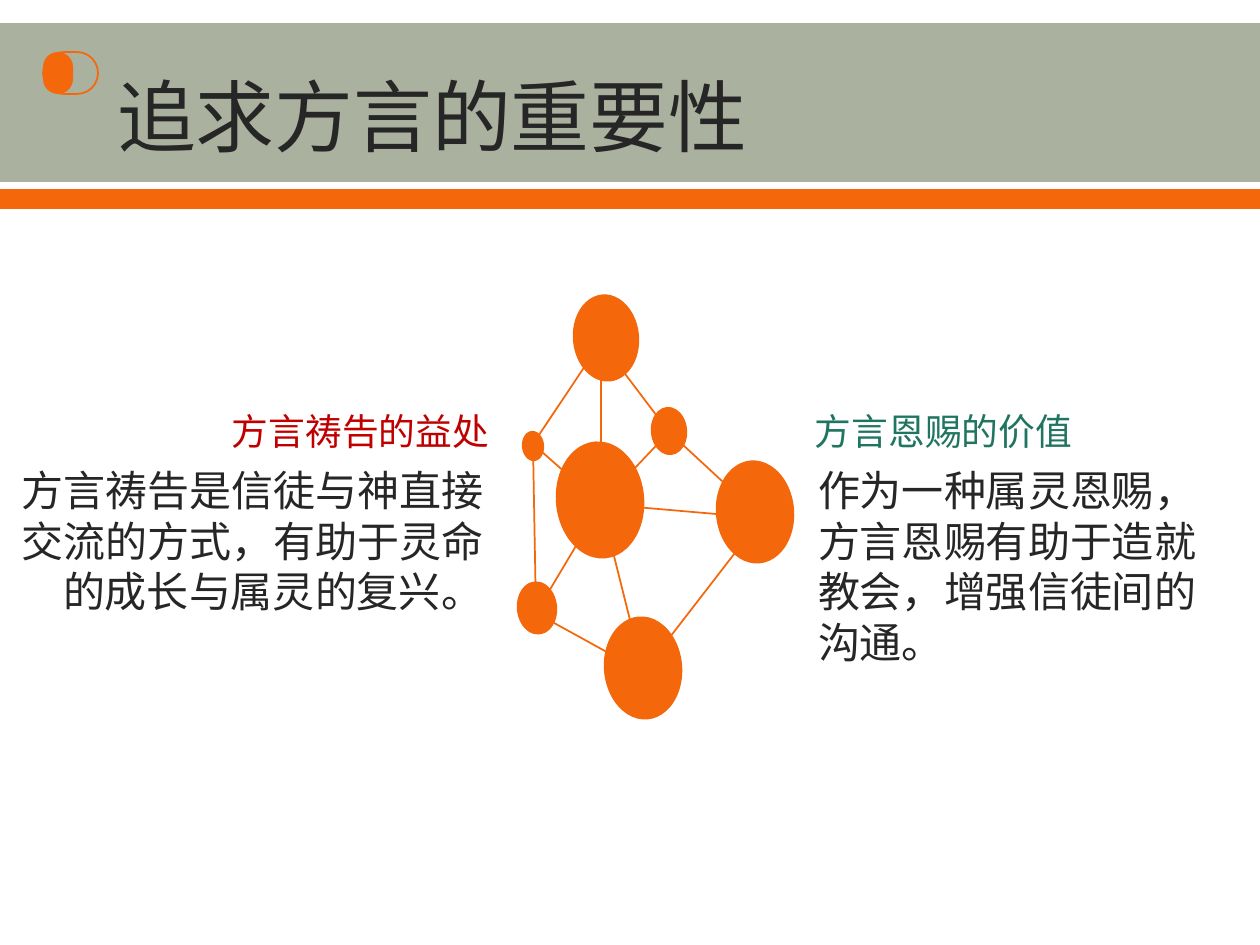
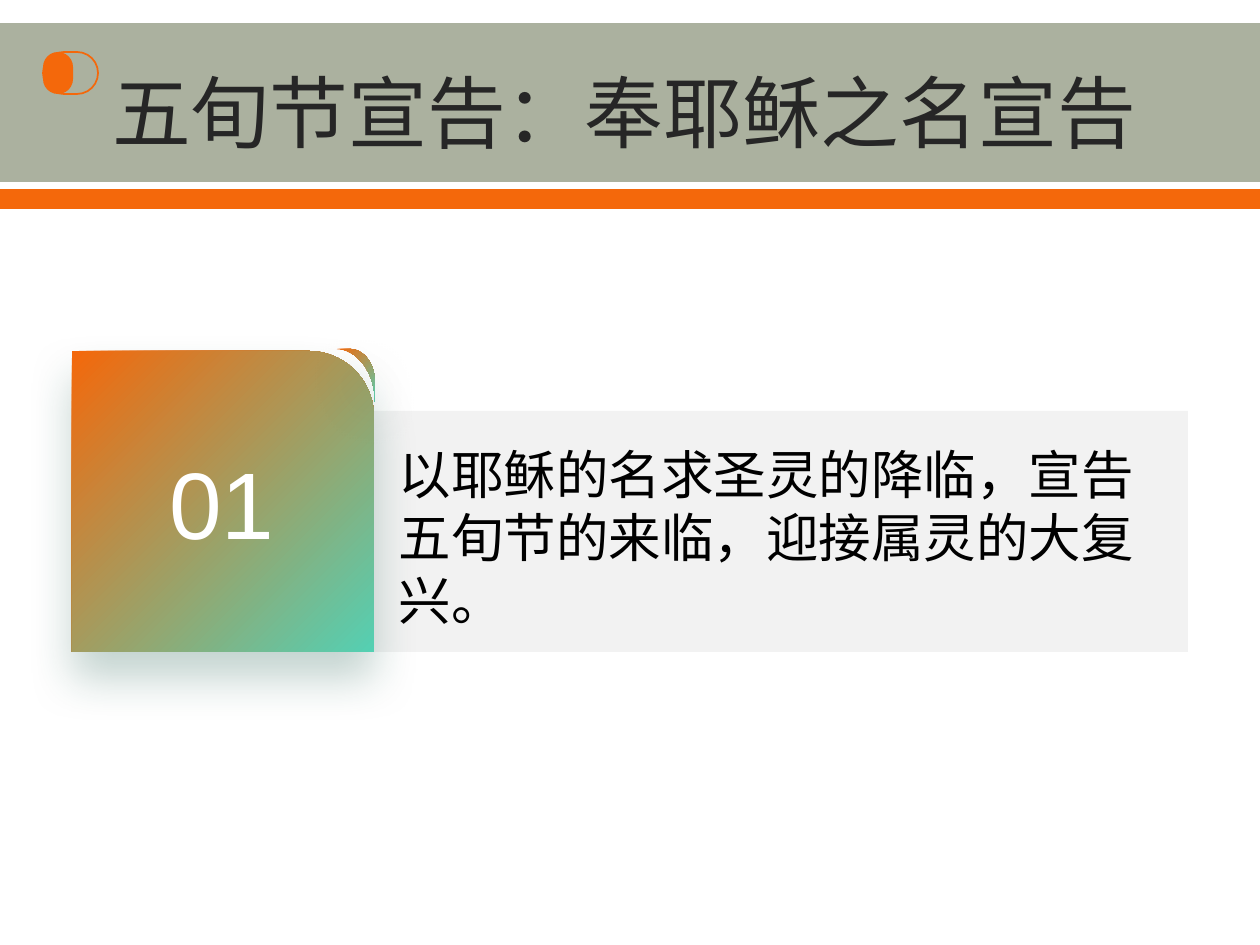
from math import cos, pi, sin

from lxml import etree
from pptx import Presentation
from pptx.dml.color import RGBColor
from pptx.enum.lang import MSO_LANGUAGE_ID
from pptx.enum.shapes import MSO_CONNECTOR, MSO_SHAPE
from pptx.enum.text import MSO_ANCHOR, PP_ALIGN
from pptx.oxml.ns import qn
from pptx.util import Pt

RECTANGLE = MSO_SHAPE.RECTANGLE
ROUNDED = MSO_SHAPE.ROUNDED_RECTANGLE
ONE_ROUND_CORNER = MSO_SHAPE.ROUND_1_RECTANGLE
ELLIPSE = MSO_SHAPE.OVAL
STRAIGHT = MSO_CONNECTOR.STRAIGHT
LEFT, CENTER, RIGHT = PP_ALIGN.LEFT, PP_ALIGN.CENTER, PP_ALIGN.RIGHT
TOP, MIDDLE, BOTTOM = MSO_ANCHOR.TOP, MSO_ANCHOR.MIDDLE, MSO_ANCHOR.BOTTOM
CHINESE = MSO_LANGUAGE_ID.SIMPLIFIED_CHINESE

PX = 914400 / 126  # EMU in one px


class Theme:
    font = "Arial"
    orange = RGBColor.from_string("F4680B")
    sage = RGBColor.from_string("ABB19F")
    mint = RGBColor.from_string("54D0B3")
    green = RGBColor.from_string("207561")
    red = RGBColor.from_string("C00000")
    panel = RGBColor.from_string("F2F2F2")
    ink = RGBColor.from_string("262626")
    black = RGBColor.from_string("000000")
    white = RGBColor.from_string("FFFFFF")
    shadow = "185748"
    title_size, number_size, statement_size = Pt(45), Pt(54), Pt(30)
    body_size, label_size = Pt(24), Pt(21)


def add_shape(slide, kind, box, fill=None, line=None, width=0.75):
    shape = slide.shapes.add_shape(kind, *[round(value * PX) for value in box])
    shape.shadow.inherit = False
    if fill is None:
        shape.fill.background()
    else:
        shape.fill.solid()
        shape.fill.fore_color.rgb = fill
    if line is None:
        shape.line.fill.background()
    else:
        shape.line.color.rgb = line
        shape.line.width = Pt(width)
    return shape


def add_text(slide, box, text, size, color, align=LEFT, anchor=TOP, spacing=None):
    shape = slide.shapes.add_textbox(*[round(value * PX) for value in box])
    frame = shape.text_frame
    paragraph = frame.paragraphs[0]
    run = paragraph.add_run()
    run.text = text
    run.font.color.rgb = color
    formats = {
        frame: dict(word_wrap=True, vertical_anchor=anchor, margin_left=0,
                    margin_right=0, margin_top=0, margin_bottom=0),
        paragraph: dict(alignment=align, line_spacing=spacing),
        run.font: dict(name=Theme.font, size=size, language_id=CHINESE),
    }
    for target, values in formats.items():
        for name, value in values.items():
            setattr(target, name, value)
    east_asian = etree.SubElement(run.font._element, qn("a:ea"))
    east_asian.set("typeface", Theme.font)


presentation = Presentation()
presentation.slide_width = round(1260 * PX)
presentation.slide_height = round(945 * PX)
blank = presentation.slide_layouts[6]

# Shared header: bands, toggle and title
titles = [("追求方言的重要性", 117, 68), ("五旬节宣告：奉耶稣之名宣告", 112, 64)]
for title, left, top in titles:
    slide = presentation.slides.add_slide(blank)
    add_shape(slide, RECTANGLE, (0, 23, 1260, 159), Theme.sage)
    add_shape(slide, RECTANGLE, (0, 189, 1260, 20), Theme.orange)
    toggle = add_shape(slide, ROUNDED, (43, 52, 55, 42), line=Theme.orange, width=1)
    knob = add_shape(slide, ROUNDED, (43, 52, 30, 42), Theme.orange)
    for pill in (toggle, knob):
        pill.adjustments[0] = 0.5
    add_text(slide, (left, top, 1076, 66), title, Theme.title_size, Theme.ink,
             anchor=MIDDLE, spacing=1.3)
importance, declaration = presentation.slides

# Slide 1: two columns beside the network
columns = [
    ("方言恩赐的价值", (815, 410, 391, 43), Theme.green, LEFT,
     "作为一种属灵恩赐，方言恩赐有助于造就教会，增强信徒间的沟通。", (818, 465, 387, 229)),
    ("方言祷告的益处", (54, 410, 435, 43), Theme.red, RIGHT,
     "方言祷告是信徒与神直接交流的方式，有助于灵命的成长与属灵的复兴。", (19, 465, 464, 229)),
]
for label, label_box, color, align, body, body_box in columns:
    add_text(importance, body_box, body, Theme.body_size, Theme.ink, align)
    add_text(importance, label_box, label, Theme.label_size, color, align, BOTTOM)

# Network links, drawn between joints under the nodes
joints = {
    "top": (601, 342), "upper": (669, 432), "hub": (601, 504), "left": (533, 444),
    "lower": (536, 613), "bottom": (643, 672), "right": (762, 518),
}
links = [
    ("top", "upper"), ("top", "hub"), ("top", "left"), ("upper", "hub"),
    ("upper", "right"), ("left", "hub"), ("left", "lower"), ("hub", "lower"),
    ("hub", "right"), ("hub", "bottom"), ("right", "bottom"), ("lower", "bottom"),
]
for start, end in links:
    ends = [round(value * PX) for value in joints[start] + joints[end]]
    link = importance.shapes.add_connector(STRAIGHT, *ends)
    link.line.color.rgb = Theme.orange
    link.line.width = Pt(1)
    etree.SubElement(link._element.spPr, qn("a:effectLst"))

# Network nodes: centre x, centre y, long axis, short axis
nodes = [
    (600, 500, 116, 87), (606, 338, 86, 65), (537, 608, 52, 39), (755, 512, 102, 77),
    (533, 446, 29, 21), (643, 668, 102, 77), (669, 431, 47, 35),
]
for x, y, long, short in nodes:
    box = (x - long / 2, y - short / 2, long, short)
    node = add_shape(importance, ELLIPSE, box, Theme.orange, Theme.orange)
    node.rotation = 85

# Slide 2: panel and numbered card
add_shape(declaration, RECTANGLE, (374, 411, 814, 241), Theme.panel)
card = add_shape(declaration, ONE_ROUND_CORNER, (72, 351, 302, 301))
card.adjustments[0] = 0.217

# Page curl: an outer and an inner quarter arc
angles = [step * pi / 32 for step in range(17)]
outer = [(350 + 25 * sin(angle), 382 - 33 * cos(angle)) for angle in angles]
inner = [(336 + 39 * cos(angle), 402 - 53 * sin(angle)) for angle in angles]
outline = [(round(x * PX), round(y * PX)) for x, y in outer + inner]
builder = declaration.shapes.build_freeform(*outline[0])
builder.add_line_segments(outline[1:], close=True)
curl = builder.convert_to_shape()
curl.shadow.inherit = False
curl.line.fill.background()

# Gradient and soft shadow of the card and its curl
for shape in (card, curl):
    shape.fill.gradient()
    shape.fill.gradient_angle = 315
    for stop, color in zip(shape.fill.gradient_stops, (Theme.orange, Theme.mint)):
        stop.color.rgb = color
    effects = shape._element.spPr.find(qn("a:effectLst"))
    shadow = etree.SubElement(effects, qn("a:outerShdw"), blurRad=str(Pt(26)),
                              dist=str(Pt(15)), dir="5400000", rotWithShape="0")
    tint = etree.SubElement(shadow, qn("a:srgbClr"), val=Theme.shadow)
    etree.SubElement(tint, qn("a:alpha"), val="25000")

add_text(declaration, (79, 417, 286, 169), "01", Theme.number_size, Theme.white,
         CENTER, MIDDLE)
add_text(declaration, (399, 442, 764, 178),
         "以耶稣的名求圣灵的降临，宣告五旬节的来临，迎接属灵的大复兴。",
         Theme.statement_size, Theme.black)

presentation.save("out.pptx")
